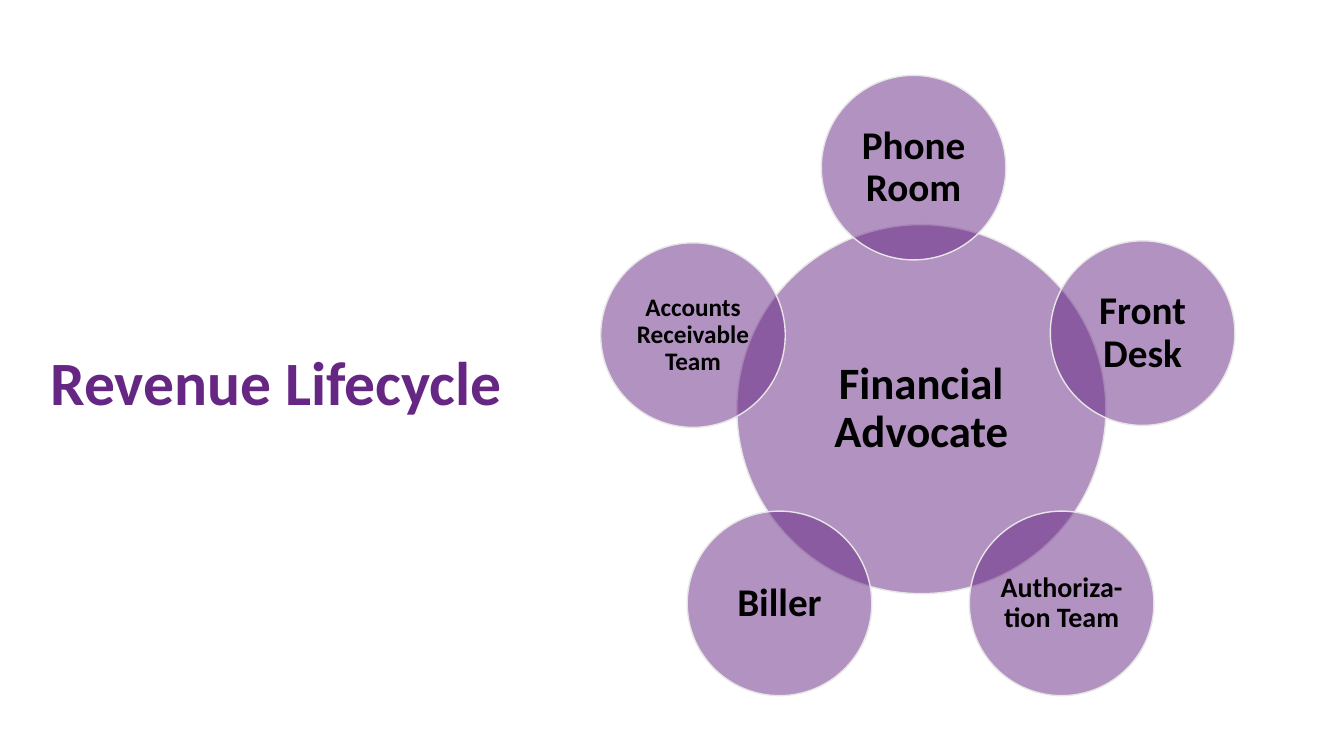
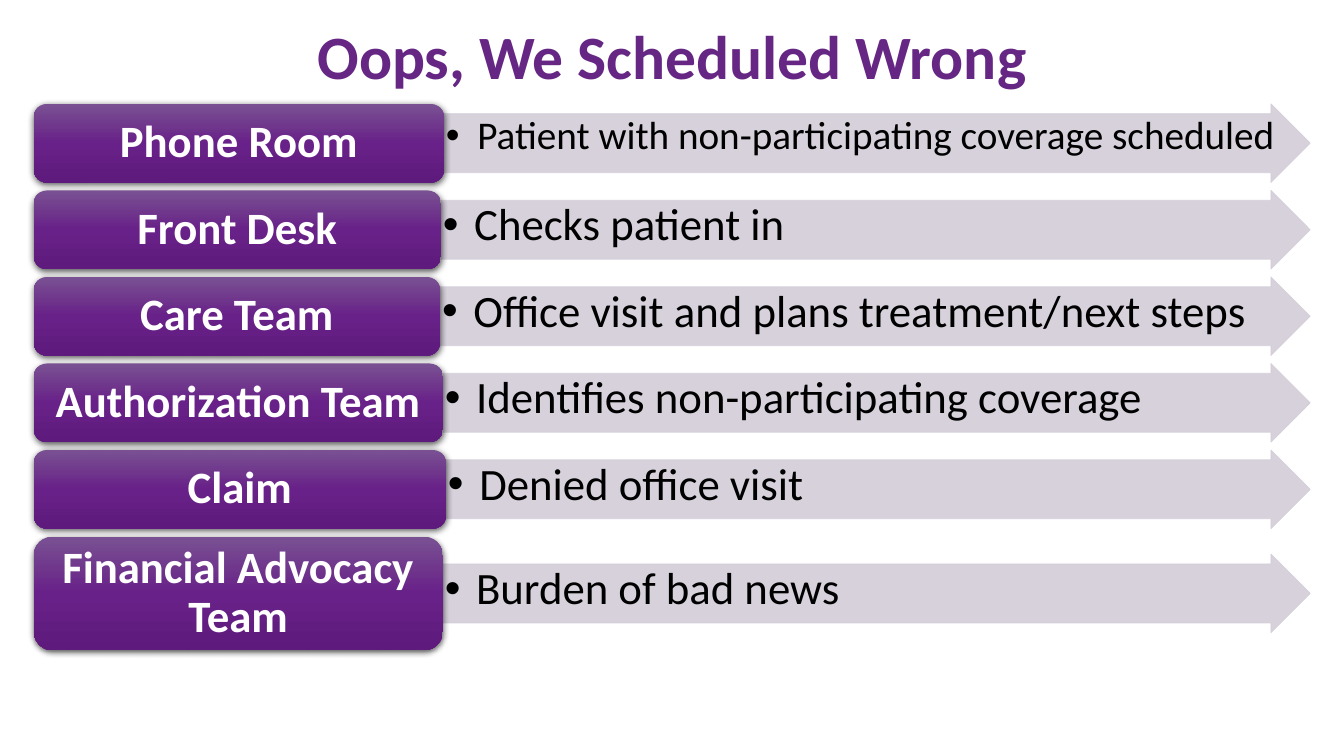
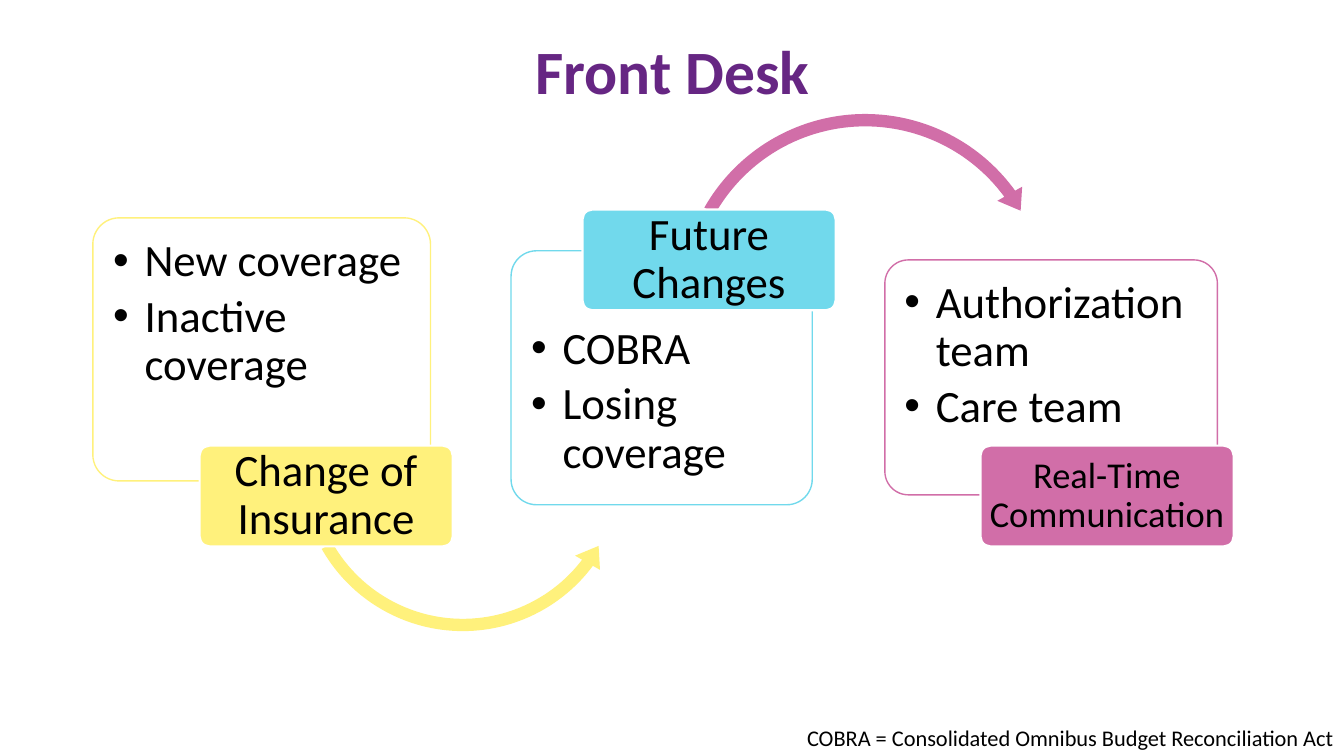
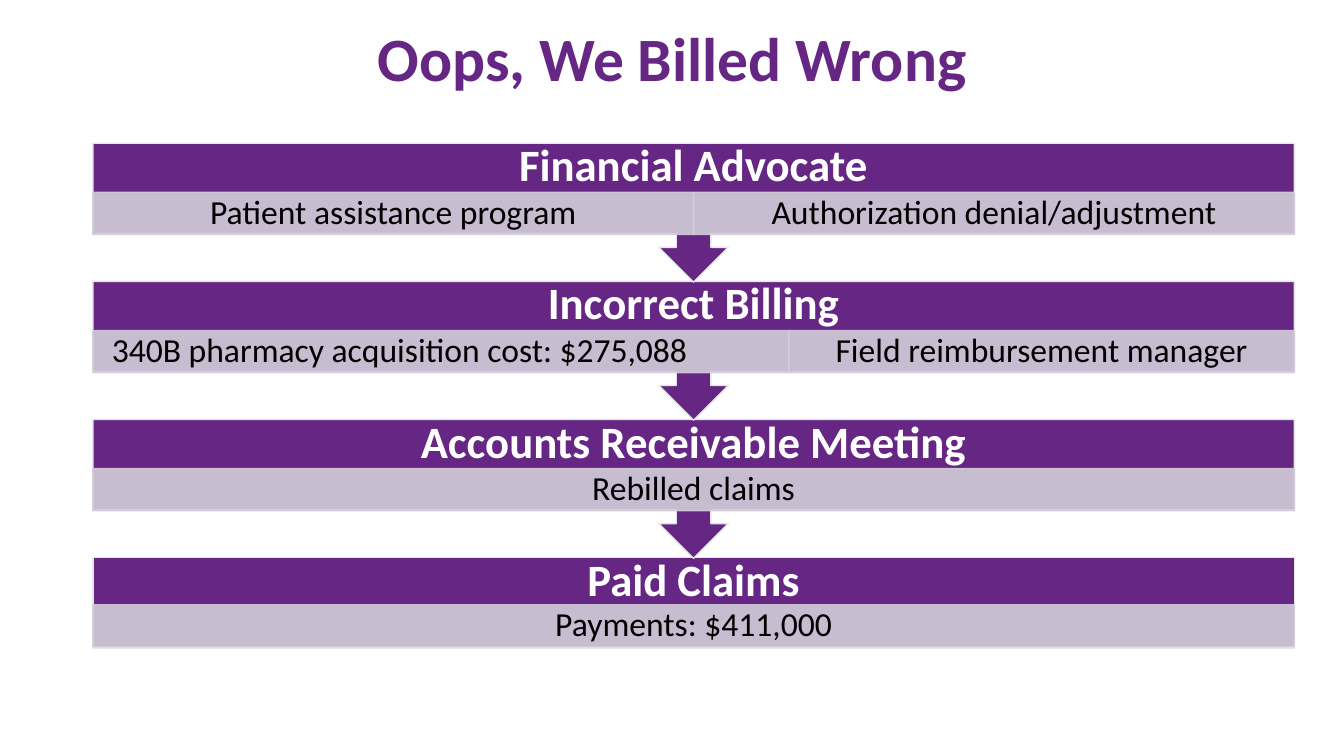
from copy import deepcopy

from lxml import etree
from pptx import Presentation
from pptx.dml.color import RGBColor
from pptx.enum.shapes import MSO_SHAPE
from pptx.enum.text import MSO_ANCHOR, PP_ALIGN
from pptx.oxml.ns import qn
from pptx.util import Cm, Pt

LEFT, CENTER, RIGHT = PP_ALIGN.LEFT, PP_ALIGN.CENTER, PP_ALIGN.RIGHT
TOP, MIDDLE = MSO_ANCHOR.TOP, MSO_ANCHOR.MIDDLE
OVAL, RECTANGLE, ROUNDED = MSO_SHAPE.OVAL, MSO_SHAPE.RECTANGLE, MSO_SHAPE.ROUNDED_RECTANGLE
RIGHT_ARROW, CALLOUT = MSO_SHAPE.RIGHT_ARROW, MSO_SHAPE.DOWN_ARROW_CALLOUT
ARC_OVER, ARC_UNDER = MSO_SHAPE.CIRCULAR_ARROW, MSO_SHAPE.LEFT_CIRCULAR_ARROW

FONT = "Calibri"
COLORS = {
    "purple": "662683", "mist": "D3CDD9", "edge": "E7E6E6",
    "black": "000000", "white": "FFFFFF",
    "yellow": "FFF17C", "blue": "71D9EC", "pink": "D16EA8",
    "label_top": "795192", "label_middle": "682188", "label_bottom": "5E1A7D",
}
LABEL_GRADIENT = [(0, "label_top"), (0.5, "label_middle"), (1, "label_bottom")]

CIRCLES = [
    ("Financial Advocate", 18.57, 5.66, 9.3, 32),
    ("Phone Room", 20.7, 1.9, 4.65, 28),
    ("Front Desk", 26.47, 6.07, 4.65, 28),
    ("Authoriza-tion Team", 24.43, 12.88, 4.65, 20),
    ("Biller", 17.32, 12.88, 4.65, 28),
    ("Accounts Receivable Team", 15.14, 6.12, 4.65, 18),
]

SCHEDULING = [
    ("Phone Room", "Patient with non-participating coverage scheduled", 10.34, 1.98, 28),
    ("Front Desk", "Checks patient in", 10.26, 1.98, 32),
    ("Care Team", "Office visit and plans treatment/next steps", 10.24, 1.98, 32),
    ("Authorization Team", "Identifies non-participating coverage", 10.31, 1.98, 32),
    ("Claim", "Denied office visit", 10.39, 1.98, 32),
    ("Financial Advocacy Team", "Burden of bad news", 10.31, 2.87, 32),
]

INSURANCE = [
    {"tag": "Change of Insurance", "size": 32, "color": "yellow", "tag_at": (5.03, 11.23),
     "bullets": ["New coverage", "Inactive coverage"],
     "panel": (2.34, 5.49, 8.51, 6.63), "text_top": 0.32},
    {"tag": "Future Changes", "size": 32, "color": "blue", "tag_at": (14.68, 5.28),
     "bullets": ["COBRA", "Losing coverage"],
     "panel": (12.88, 6.32, 7.59, 6.4), "text_top": 1.7},
    {"tag": "Real-Time Communication", "size": 26, "color": "pink", "tag_at": (24.71, 11.23),
     "bullets": ["Authorization team", "Care team"],
     "panel": (22.3, 6.55, 8.38, 5.92), "text_top": 0.32},
]
ARCS = [
    (ARC_UNDER, "yellow", 7.37, 7.52, 8.59, (3.6, 4.2), (7.4, 36.99, 150.4)),
    (ARC_OVER, "pink", 16.94, 2.67, 9.73, (3.2, 3.7), (6.47, 323.95, 209.6)),
]
FOOTNOTE = "COBRA = Consolidated Omnibus Budget Reconciliation Act"

BILLING = [
    ("Financial Advocate", [("Patient assistance program", 15.14, CENTER),
                            ("Authorization denial/adjustment", 15.14, CENTER)]),
    ("Incorrect Billing", [("340B pharmacy acquisition cost: $275,088", 17.54, LEFT),
                           ("Field reimbursement manager", 12.74, CENTER)]),
    ("Accounts Receivable Meeting", [("Rebilled claims", 30.28, CENTER)]),
    ("Paid Claims", [("Payments: $411,000", 30.28, CENTER)]),
]


def rgb(name):
    return RGBColor.from_string(COLORS[name])


def set_alpha(fill_element, percent):
    color = fill_element.find(".//" + qn("a:srgbClr"))
    etree.SubElement(color, qn("a:alpha"), val=str(percent * 1000))


def add_bullet(para):
    properties = para._p.get_or_add_pPr()
    properties.set("marL", str(Cm(0.79)))
    properties.set("indent", str(-Cm(0.79)))
    etree.SubElement(properties, qn("a:buFont"), typeface="Arial")
    etree.SubElement(properties, qn("a:buChar"), char="•")


def write(shape, lines, size, color="black", bold=False, align=CENTER, anchor=MIDDLE,
          insets=(0.1, 0.1, 0.1, 0.1), bullets=False, spacing=0.9):
    frame = shape.text_frame
    frame.word_wrap = True
    frame.vertical_anchor = anchor
    frame.margin_left, frame.margin_top, frame.margin_right, frame.margin_bottom = map(Cm, insets)
    for index, line in enumerate(lines):
        para = frame.paragraphs[0] if index == 0 else frame.add_paragraph()
        para.text = line
        para.alignment = align
        para.line_spacing = spacing
        if bullets:
            para.space_after = Pt(5)
            add_bullet(para)
        para.font.name = FONT
        para.font.size = Pt(size)
        para.font.bold = bold
        para.font.color.rgb = rgb(color)


def add_shape(page, kind, at, fill, line=None, width=1, fill_alpha=None, line_alpha=None):
    shape = page.shapes.add_shape(kind, *map(Cm, at))
    shape.shadow.inherit = False
    shape.fill.solid()
    shape.fill.fore_color.rgb = rgb(fill)
    if fill_alpha:
        set_alpha(shape._element.spPr.find(qn("a:solidFill")), fill_alpha)
    if line:
        shape.line.color.rgb = rgb(line)
        shape.line.width = Pt(width)
        if line_alpha:
            set_alpha(shape._element.spPr.find(qn("a:ln")), line_alpha)
    else:
        shape.line.fill.background()
    return shape


def add_text(page, at, lines, size, **style):
    box = page.shapes.add_textbox(*map(Cm, at))
    write(box, lines, size, insets=(0.25, 0.13, 0.25, 0.13), **style)


def add_page(deck, title, left=2.34, top=0.25, height=2.59, align=CENTER):
    page = deck.slides.add_slide(deck.slide_layouts[6])
    add_text(page, (left, top, 29.21, height), [title], 44,
             color="purple", bold=True, align=align)
    return page


def style_label(shape):
    fill = shape.fill
    fill.gradient()
    fill.gradient_angle = 270
    stops = shape._element.spPr.find(".//" + qn("a:gsLst"))
    stops.insert(1, deepcopy(stops[0]))
    for stop, (position, color) in zip(fill.gradient_stops, LABEL_GRADIENT):
        stop.position = position
        stop.color.rgb = rgb(color)
    effects = shape._element.spPr.find(qn("a:effectLst"))
    shadow = etree.SubElement(effects, qn("a:outerShdw"), blurRad=str(Pt(4.5)),
                              dist=str(Pt(1.5)), dir="5400000", rotWithShape="0")
    etree.SubElement(shadow, qn("a:srgbClr"), val=COLORS["black"])
    set_alpha(shadow, 63)


def build_lifecycle(deck):
    page = add_page(deck, "Revenue Lifecycle", left=1.02, top=7.87, height=3.68, align=LEFT)
    for name, left, top, diameter, size in CIRCLES:
        circle = add_shape(page, OVAL, (left, top, diameter, diameter), "purple", "edge",
                           fill_alpha=50)
        write(circle, [name], size, bold=True)


def build_scheduling(deck):
    page = add_page(deck, "Oops, We Scheduled Wrong", top=0.2)
    left, right, top, gap, arrow_height = 0.85, 33.02, 2.62, 0.2, 1.98
    for team, event, width, height, size in SCHEDULING:
        start = left + width
        arrow_top = top + (height - arrow_height) / 2
        arrow = add_shape(page, RIGHT_ARROW, (start, arrow_top, right - start, arrow_height),
                          "mist", "mist", 0.5, fill_alpha=90, line_alpha=90)
        arrow.adjustments[0] = 0.75
        write(arrow, [event], size, align=LEFT, anchor=TOP, insets=(0.05, 0.05, 0, 0.05),
              bullets=True)
        label = add_shape(page, ROUNDED, (left, top, width, height), "purple")
        style_label(label)
        write(label, [team], 32, color="white", bold=True, insets=(0.33, 0.17, 0.33, 0.17))
        top += height + gap


def build_front_desk(deck):
    page = add_page(deck, "Front Desk", top=0.46, height=2.84)
    for group in INSURANCE:
        panel = add_shape(page, ROUNDED, group["panel"], "white", group["color"], fill_alpha=90)
        panel.adjustments[0] = 0.1
        write(panel, group["bullets"], 32, align=LEFT, anchor=TOP,
              insets=(0.32, group["text_top"], 0.32, 0.32), bullets=True)
    for kind, color, left, top, diameter, (thickness, head), degrees in ARCS:
        arc = add_shape(page, kind, (left, top, diameter, diameter), color)
        values = [thickness / 100, *(angle * 0.6 for angle in degrees), head / 100]
        for index, value in enumerate(values):
            arc.adjustments[index] = value
    for group in INSURANCE:
        tag = add_shape(page, ROUNDED, (*group["tag_at"], 6.38, 2.54), group["color"],
                        "white", 1.5)
        tag.adjustments[0] = 0.1
        write(tag, [group["tag"]], group["size"])
    add_text(page, (19.28, 18.11, 14.58, 0.94), [FOOTNOTE], 16, align=RIGHT, anchor=TOP,
             spacing=1)


def build_billing(deck):
    page = add_page(deck, "Oops, We Billed Wrong")
    left, width, first_top, pitch, strip_height = 2.34, 30.28, 3.61, 3.48, 1.06
    last = len(BILLING) - 1
    for index, (heading, details) in reversed(list(enumerate(BILLING))):
        top = first_top + index * pitch
        kind, height, offset = (RECTANGLE, 2.28, 1.19) if index == last else (CALLOUT, 3.5, 1.24)
        step = add_shape(page, kind, (left, top, width, height), "purple", "edge")
        write(step, [heading], 32, color="white", bold=True, insets=(0.64, 0, 0.64, strip_height))
        strip_left = left
        for detail, strip_width, align in details:
            strip = add_shape(page, RECTANGLE,
                              (strip_left, top + offset, strip_width, strip_height),
                              "mist", "mist", fill_alpha=90, line_alpha=90)
            write(strip, [detail], 24, align=align, insets=(0.48, 0.08, 0.48, 0.08))
            strip_left += strip_width


def main():
    deck = Presentation()
    deck.slide_width, deck.slide_height = Cm(33.87), Cm(19.05)
    for build in (build_lifecycle, build_scheduling, build_front_desk, build_billing):
        build(deck)
    deck.save("out.pptx")


if __name__ == "__main__":
    main()
